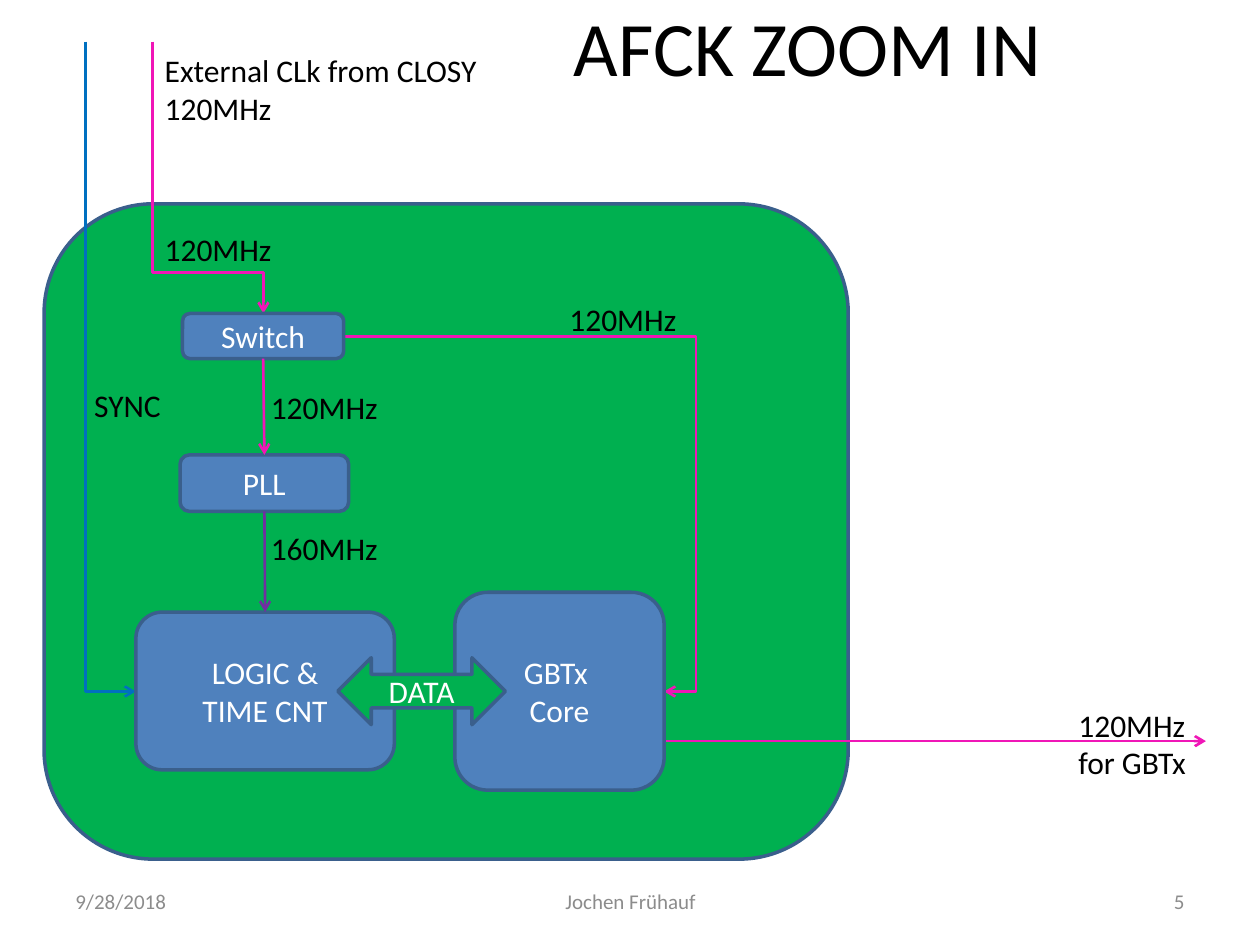
import pptx
import pptx.dml.color
import pptx.enum.shapes
import pptx.enum.text
import pptx.oxml.ns
import pptx.oxml.xmlchemy
import pptx.util

Cm = pptx.util.Cm
Pt = pptx.util.Pt
Shape = pptx.enum.shapes.MSO_SHAPE
Connector = pptx.enum.shapes.MSO_CONNECTOR
Align = pptx.enum.text.PP_ALIGN
Anchor = pptx.enum.text.MSO_ANCHOR
OxmlElement = pptx.oxml.xmlchemy.OxmlElement
qn = pptx.oxml.ns.qn

GREEN, BLUE, EDGE = "00B050", "4F81BD", "3A5F8C"
PINK, PURPLE, SYNC_BLUE = "F016B7", "7030A0", "0070C0"


def paint(color_format, hex_color):
    color_format.rgb = pptx.dml.color.RGBColor.from_string(hex_color)


def write(frame, text, size, hex_color, align, anchor):
    frame.text = text
    frame.vertical_anchor = anchor
    for para in frame.paragraphs:
        para.alignment = align
        for span in para.runs:
            span.font.name = "Calibri"
            span.font.size = Pt(size)
            paint(span.font.color, hex_color)


deck = pptx.Presentation()
deck.slide_width = Cm(25.4)
deck.slide_height = Cm(19.05)
page = deck.slides.add_slide(deck.slide_layouts[5])

title = page.shapes.title
title.left, title.top, title.width, title.height = Cm(4.85), Cm(-0.66), Cm(22.86), Cm(3.18)
write(title.text_frame, "AFCK ZOOM IN", 44, "000000", Align.CENTER, Anchor.MIDDLE)

footers = [
    ("9/28/2018", 1.27, 5.92, Align.LEFT),
    ("Jochen Frühauf", 8.69, 8.05, Align.CENTER),
    ("5", 18.21, 5.92, Align.RIGHT),
]
for text, left, width, align in footers:
    box = page.shapes.add_textbox(Cm(left), Cm(17.65), Cm(width), Cm(1.02))
    box.text_frame.word_wrap = True
    write(box.text_frame, text, 12, "8C8C8C", align, Anchor.MIDDLE)

board = page.shapes.add_shape(
    Shape.FLOWCHART_ALTERNATE_PROCESS, Cm(0.89), Cm(4.11), Cm(16.21), Cm(13.21))

output_line = page.shapes.add_connector(
    Connector.STRAIGHT, Cm(11.58), Cm(14.94), Cm(24.31), Cm(14.94))
wires = [(output_line, PINK)]

elbows = [
    ("bentConnector3", 3.07, 0.84, 5.31, 6.32, 85000, True, PINK),
    ("bentConnector3", 6.93, 6.78, 13.39, 13.94, 109900, False, PINK),
    ("bentConnector2", 1.73, 0.84, 2.74, 13.94, None, True, SYNC_BLUE),
]
for preset, x1, y1, x2, y2, bend, starts_down, color in elbows:
    elbow = page.shapes.add_connector(Connector.ELBOW, Cm(x1), Cm(y1), Cm(x2), Cm(y2))
    geometry = elbow._element.spPr.find(qn("a:prstGeom"))
    geometry.set("prst", preset)
    if bend:
        guide = OxmlElement("a:gd")
        guide.set("name", "adj1")
        guide.set("fmla", f"val {bend}")
        geometry.find(qn("a:avLst")).append(guide)
    if starts_down:
        across, down = x2 - x1, y2 - y1
        elbow.left, elbow.top = Cm((x1 + x2 - down) / 2), Cm((y1 + y2 - across) / 2)
        elbow.width, elbow.height = Cm(down), Cm(across)
        frame = elbow._element.spPr.find(qn("a:xfrm"))
        frame.set("rot", "16200000")
        frame.set("flipH", "1")
    wires.append((elbow, color))

blocks = [
    ("Switch", Shape.FLOWCHART_ALTERNATE_PROCESS, 3.68, 6.32, 3.25, 0.91, BLUE),
    ("PLL", Shape.FLOWCHART_ALTERNATE_PROCESS, 3.63, 9.17, 3.4, 1.14, BLUE),
    ("LOGIC &\nTIME CNT", Shape.ROUNDED_RECTANGLE, 2.74, 12.34, 5.21, 3.18, BLUE),
    ("GBTx \nCore", Shape.FLOWCHART_ALTERNATE_PROCESS, 9.17, 11.94, 4.22, 3.99, BLUE),
    ("DATA", Shape.LEFT_RIGHT_ARROW, 6.81, 13.26, 3.38, 1.35, GREEN),
]
painted = [(board, GREEN)]
for text, preset, left, top, width, height, color in blocks:
    block = page.shapes.add_shape(preset, Cm(left), Cm(top), Cm(width), Cm(height))
    write(block.text_frame, text, 18, "FFFFFF", Align.CENTER, Anchor.MIDDLE)
    painted.append((block, color))

for block, color in painted:
    block.shadow.inherit = False
    block.fill.solid()
    paint(block.fill.fore_color, color)
    paint(block.line.color, EDGE)
    block.line.width = Pt(2)

switch, pll, logic = [block for block, color in painted[1:4]]
for source, target, color in [(switch, pll, PINK), (pll, logic, PURPLE)]:
    link = page.shapes.add_connector(Connector.STRAIGHT, 0, 0, 0, 0)
    link.begin_connect(source, 2)
    link.end_connect(target, 0)
    wires.append((link, color))

for wire, color in wires:
    paint(wire.line.color, color)
    wire.line.width = Pt(1.5)
    arrowhead = OxmlElement("a:tailEnd")
    arrowhead.set("type", "arrow")
    wire.get_or_add_ln().append(arrowhead)
    wire._element.spPr.append(OxmlElement("a:effectLst"))

labels = [
    ("External CLk from CLOSY\n120MHz", 3.07, 0.91, 6.88, 2.57),
    ("120MHz", 3.07, 4.52, 2.69, 1.02),
    ("120MHz", 11.23, 5.92, 2.69, 1.02),
    ("120MHz", 5.21, 7.7, 2.69, 1.02),
    ("SYNC", 1.65, 7.65, 1.88, 1.02),
    ("160MHz", 5.21, 10.54, 2.69, 1.02),
    ("120MHz\nfor GBTx", 21.49, 14.1, 2.69, 1.8),
]
for text, left, top, width, height in labels:
    box = page.shapes.add_textbox(Cm(left), Cm(top), Cm(width), Cm(height))
    box.text_frame.word_wrap = False
    write(box.text_frame, text, 18, "000000", Align.LEFT, Anchor.TOP)

deck.save("out.pptx")
